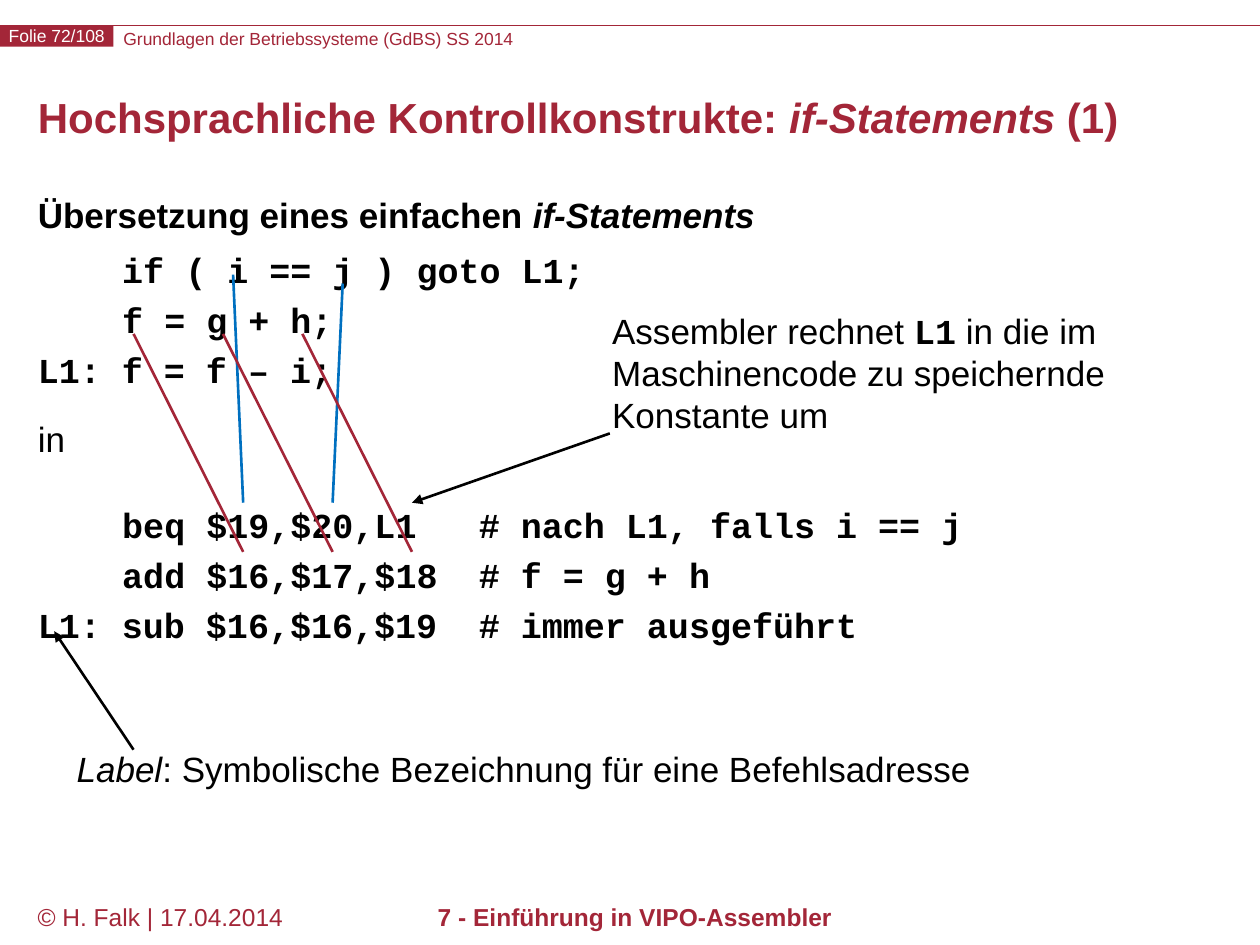
from lxml import etree
from pptx import Presentation
from pptx.dml.color import RGBColor
from pptx.enum import shapes, text
from pptx.oxml import ns
from pptx.util import Inches, Pt

RED, BLUE, BLACK, WHITE = "A32638", "0070C0", "000000", "FFFFFF"
MID, TOP = text.MSO_ANCHOR.MIDDLE, text.MSO_ANCHOR.TOP
CENTER, LEFT = text.PP_ALIGN.CENTER, text.PP_ALIGN.LEFT


def tint(color):
    return RGBColor.from_string(color)


def write(para, runs, size, color=BLACK):
    """Add (text, style) runs; style letters: b bold, i italic, m monospaced."""
    for words, style in runs:
        run = para.add_run()
        run.text = words
        font = run.font
        font.size = Pt(size)
        font.name = "Courier New" if "m" in style else "Arial"
        font.bold, font.italic = "b" in style, "i" in style
        font.color.rgb = tint(color)


def place(shape, box):
    shape.left, shape.top, shape.width, shape.height = map(Inches, box)


def frame(shape, inset=True, anchor=TOP):
    area = shape.text_frame
    area.word_wrap = True
    area.auto_size = text.MSO_AUTO_SIZE.NONE
    area.vertical_anchor = anchor
    side, edge = (0.1, 0.05) if inset else (0, 0)
    area.margin_left = area.margin_right = Inches(side)
    area.margin_top = area.margin_bottom = Inches(edge)
    return area


def label(parent, box, runs, size, color=BLACK, align=LEFT, inset=True):
    area = frame(parent.add_textbox(*map(Inches, box)), inset)
    para = area.paragraphs[0]
    para.alignment = align
    write(para, runs, size, color)


def link(parent, start, end, color, width=1.5, arrow=False):
    line = parent.add_connector(
        shapes.MSO_CONNECTOR.STRAIGHT, *map(Inches, (*start, *end)))
    line.line.color.rgb = tint(color)
    line.line.width = Pt(width)
    props = line._element.spPr
    if arrow:
        tip = etree.SubElement(props.find(ns.qn("a:ln")), ns.qn("a:tailEnd"))
        tip.set("type", "triangle")
    etree.SubElement(props, ns.qn("a:effectLst"))


def header(slide, box):
    left, top, width, height = box
    tree = slide.shapes
    link(tree, (left, top), (left + width, top), RED, 0.75)
    label(tree, (left + 0.98, top + 0.02, 6.6, height),
          [("Grundlagen der Betriebssysteme (GdBS) SS 2014", "")],
          10, RED, inset=False)
    badge = tree.add_shape(shapes.MSO_SHAPE.RECTANGLE,
                           *map(Inches, (left, top, 0.9, height)))
    badge.shadow.inherit = False
    badge.fill.solid()
    badge.fill.fore_color.rgb = tint(RED)
    badge.line.fill.background()
    para = frame(badge, False, MID).paragraphs[0]
    para.alignment = CENTER
    write(para, [("Folie 72/108", "")], 10, WHITE)


def title(slide, box):
    shape = slide.shapes.title
    place(shape, box)
    para = frame(shape, anchor=MID).paragraphs[0]
    para.alignment = LEFT
    para.line_spacing = Pt(24)
    write(para, [("Hochsprachliche Kontrollkonstrukte: ", "b"),
                 ("if-Statements", "bi"), (" (1)", "b")], 24, RED)


def code(words):
    return [(words, "bm")]


def body(slide, box):
    shape = slide.placeholders[1]
    place(shape, box)
    area = frame(shape)
    step, tab = 28.6, 5
    # first-line indent, space before, line height, runs
    rows = [
        (0, 0, 21.5, [("Übersetzung eines einfachen ", "b"),
                      ("if-Statements", "bi")]),
        (0.67, 2.9, step, code("if ( i == j ) goto L1;")),
        (0.67, 0, step, code("f = g + h;")),
        (0, 0, step, code("L1: f = f – i;")),
        (0, 10.8, step, [("in", "")]),
        (0.67, 20.6, step, code("beq $19,$20,L1\t# nach L1, falls i == j")),
        (0.67, 0, step, code("add $16,$17,$18\t# f = g + h")),
        (0, 0, step, code("L1: sub $16,$16,$19\t# immer ausgeführt")),
    ]
    for i, (indent, gap, height, runs) in enumerate(rows):
        para = area.add_paragraph() if i else area.paragraphs[0]
        para.line_spacing = Pt(height)
        para.space_before, para.space_after = Pt(gap), Pt(0)
        props = para._p.get_or_add_pPr()
        props.set("marL", "0")
        props.set("indent", str(Inches(indent)))
        etree.SubElement(props, ns.qn("a:buNone"))
        stops = etree.SubElement(props, ns.qn("a:tabLst"))
        stop = etree.SubElement(stops, ns.qn("a:tab"))
        stop.set("pos", str(Inches(tab)))
        stop.set("algn", "l")
        write(para, runs, 20)


def mapping(slide, box):
    """Link each variable to its register."""
    left, top = box[:2]
    group = slide.shapes.add_group_shape().shapes
    for x, y, end in ((0.79, 0, 0.87), (1.66, 0.07, 1.58)):
        link(group, (left + x, top + y), (left + end, top + 1.81), BLUE)
    for x in (0, 0.71, 1.34):
        link(group, (left + x, top + 0.47), (left + x + 0.87, top + 2.2), RED)


def note(slide, box, runs, start, end):
    """Place a remark with an arrow whose ends are offsets from its box."""
    left, top = box[:2]
    group = slide.shapes.add_group_shape().shapes
    label(group, box, runs, 20)
    ends = [(left + x, top + y) for x, y in (start, end)]
    link(group, *ends, BLACK, arrow=True)


def footer(slide, box):
    left, top, width, height = box
    label(slide.shapes, (left, top, 2.6, height),
          [("© H. Falk | 17.04.2014", "")], 14, RED)
    label(slide.shapes, (left + 1.81, top, 6.06, height),
          [("7 - Einführung in VIPO-Assembler", "b")], 14, RED, CENTER)


def main():
    deck = Presentation()
    deck.slide_width, deck.slide_height = Inches(10), Inches(7.5)
    slide = deck.slides.add_slide(deck.slide_layouts[1])
    header(slide, (0, 0.2, 10, 0.17))
    title(slide, (0.2, 0.6, 9.61, 0.72))
    body(slide, (0.2, 1.52, 9.61, 5.46))
    mapping(slide, (1.06, 2.18, 2.21, 2.2))
    note(slide, (0.51, 5.88, 7.36, 0.44),
         [("Label", "i"),
          (": Symbolische Bezeichnung für eine Befehlsadresse", "")],
         (0.55, 0.07), (-0.08, -0.87))
    note(slide, (4.76, 2.41, 4.17, 1.11),
         [("Assembler rechnet ", ""), ("L1", "bm"),
          (" in die im Maschinencode zu speichernde Konstante um", "")],
         (0.08, 1.03), (-1.49, 1.58))
    footer(slide, (0.2, 7.11, 9.61, 0.39))
    deck.save("out.pptx")


if __name__ == "__main__":
    main()
